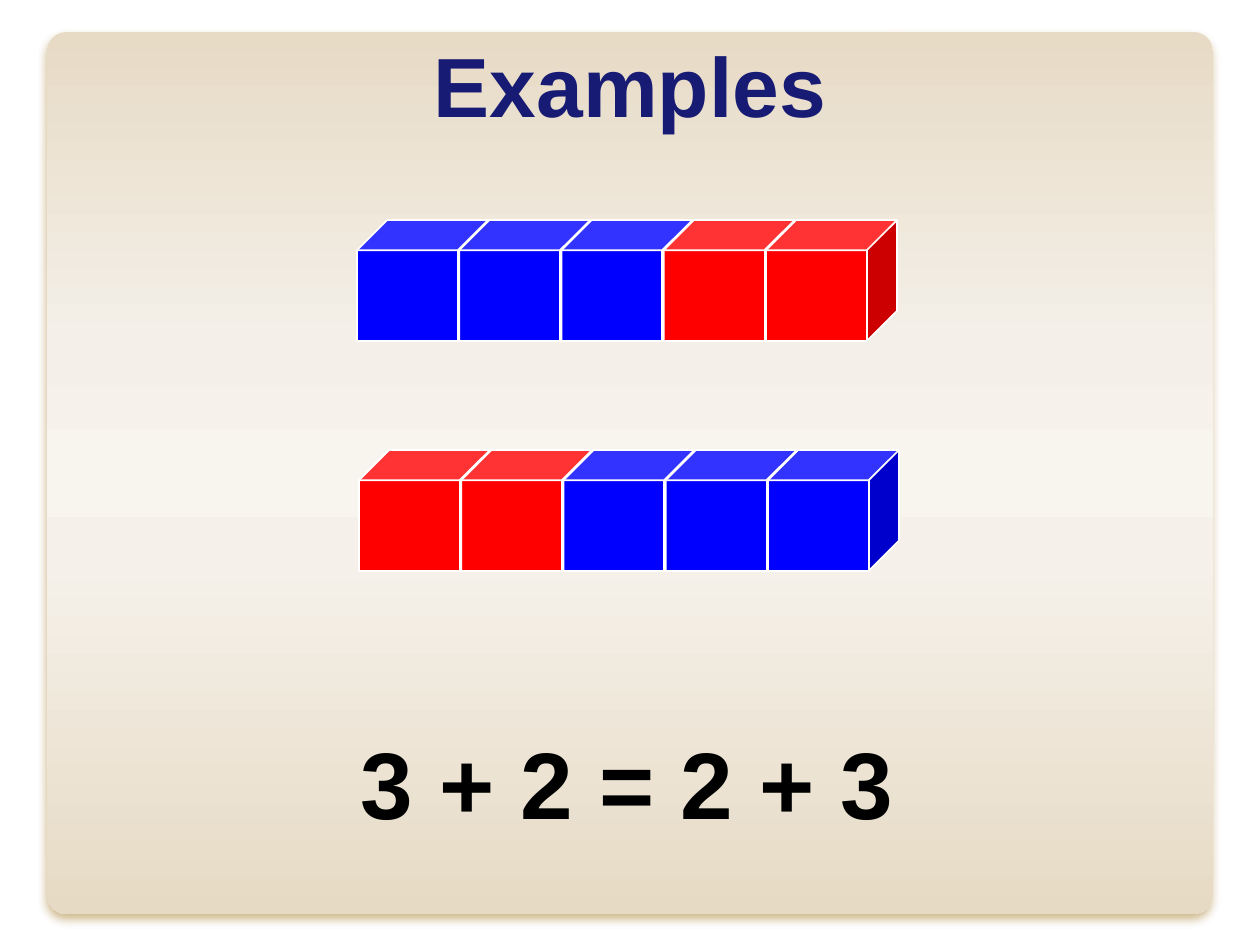
from pptx import Presentation
from pptx.dml.color import RGBColor
from pptx.enum.shapes import MSO_SHAPE as Shape
from pptx.enum.text import MSO_ANCHOR as Anchor, MSO_AUTO_SIZE as AutoSize, PP_ALIGN as Align
from pptx.oxml import parse_xml
from pptx.util import Emu, Pt

# Content
TITLE = "Examples"
EQUATION = "3 + 2 = 2 + 3"
TRAINS = [  # left, top, cube colours in order
    (357, 220, ["blue"] * 3 + ["red"] * 2),
    (359, 450, ["red"] * 2 + ["blue"] * 3),
]

# Layout, in px
PAGE = (1260, 945)
PANEL = (47, 32, 1166, 882)
TITLE_BOX = (63, 5, 1134, 158)
EQUATION_BOX = (344, 719, 567, 127)
CUBE = (131, 121)
FIRST_TO_LAST = 409

THEME = {
    "font": "Arial", "title_size": 48, "equation_size": 54,
    "title": "171B73", "equation": "000000",
    "blue": "0000FF", "red": "FF0000", "edge": "FFFFFF",
    "shadow": "956400",
    "panel": [(0, "E7DBC6"), (35, "F4EFE8"), (50, "F8F5EE"), (60, "F5F1EA"), (100, "E6DAC4")],
}
NS = 'xmlns:a="http://schemas.openxmlformats.org/drawingml/2006/main"'


def px(value):
    return Emu(round(value * 914400 / 126))


def color(name):
    return RGBColor.from_string(THEME[name])


def write(box, text, role):
    frame = box.text_frame
    frame.word_wrap = True
    para = frame.paragraphs[0]
    para.alignment = Align.CENTER
    span = para.add_run()
    span.text = text
    span.font.name = THEME["font"]
    span.font.size = Pt(THEME[role + "_size"])
    span.font.bold = True
    span.font.color.rgb = color(role)
    return frame


def add_panel(page):
    panel = page.shapes.add_shape(Shape.ROUNDED_RECTANGLE, *map(px, PANEL))
    panel.adjustments[0] = 0.022
    panel.line.fill.background()
    # Multi-stop gradient and soft shadow
    stops = "".join(f'<a:gs pos="{at * 1000}"><a:srgbClr val="{shade}"/></a:gs>'
                    for at, shade in THEME["panel"])
    gradient = parse_xml(f'<a:gradFill {NS} rotWithShape="1"><a:gsLst>{stops}</a:gsLst>'
                         '<a:lin ang="5400000" scaled="0"/></a:gradFill>')
    shadow = parse_xml(f'<a:effectLst {NS}><a:outerShdw blurRad="{Pt(5)}" dist="{Pt(3.6)}" '
                       f'dir="5400000" rotWithShape="0"><a:srgbClr val="{THEME["shadow"]}">'
                       '<a:alpha val="45000"/></a:srgbClr></a:outerShdw></a:effectLst>')
    outline = panel.line._get_or_add_ln()
    outline.addprevious(gradient)
    outline.addnext(shadow)
    # Behind the title
    page.shapes._spTree.insert(2, panel._element)


def add_train(page, left, top, colors):
    for index, name in enumerate(colors):
        offset = FIRST_TO_LAST * index / (len(colors) - 1)
        cube = page.shapes.add_shape(Shape.CUBE, px(left + offset), px(top), *map(px, CUBE))
        cube.shadow.inherit = False
        cube.fill.solid()
        cube.fill.fore_color.rgb = color(name)
        cube.line.color.rgb = color("edge")
        cube.line.width = Pt(1)


def main():
    deck = Presentation()
    deck.slide_width, deck.slide_height = map(px, PAGE)
    page = deck.slides.add_slide(deck.slide_layouts[5])
    add_panel(page)

    # Title
    title = page.shapes.title
    title.left, title.top, title.width, title.height = map(px, TITLE_BOX)
    write(title, TITLE, "title").vertical_anchor = Anchor.MIDDLE

    # Cube trains
    for train in TRAINS:
        add_train(page, *train)

    # Equation
    box = page.shapes.add_textbox(*map(px, EQUATION_BOX))
    write(box, EQUATION, "equation").auto_size = AutoSize.SHAPE_TO_FIT_TEXT

    deck.save("out.pptx")


if __name__ == "__main__":
    main()
